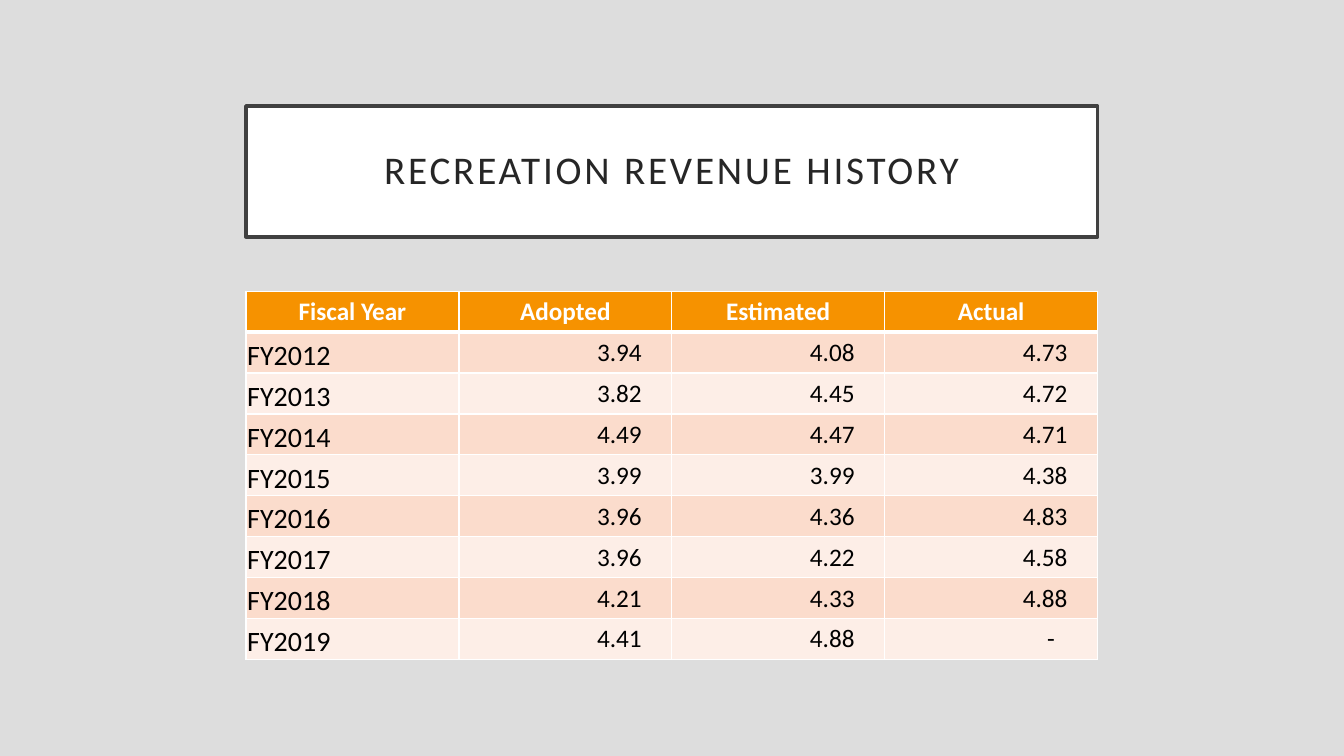
from lxml.etree import SubElement
from pptx import Presentation
from pptx.dml.color import RGBColor
from pptx.enum.shapes import MSO_SHAPE
from pptx.enum.text import MSO_ANCHOR, PP_ALIGN
from pptx.oxml.ns import qn
from pptx.util import Cm, Pt

HEAD = ["Fiscal Year", "Adopted", "Estimated", "Actual"]
ROWS = [
    ["FY2012", "3.94", "4.08", "4.73"],
    ["FY2013", "3.82", "4.45", "4.72"],
    ["FY2014", "4.49", "4.47", "4.71"],
    ["FY2015", "3.99", "3.99", "4.38"],
    ["FY2016", "3.96", "4.36", "4.83"],
    ["FY2017", "3.96", "4.22", "4.58"],
    ["FY2018", "4.21", "4.33", "4.88"],
    ["FY2019", "4.41", "4.88", "-"],
]
BANDS = ["FBDCCC", "FDEEE7"]


def paint(target, color):
    target.solid()
    target.fore_color.rgb = RGBColor.from_string(color)


def write(frame, text, size=18, color="000000", bold=False,
          align=PP_ALIGN.LEFT, lines=1.0, track=0):
    """Put one formatted run in the frame; track is letter spacing in points."""
    para = frame.paragraphs[0]
    para.alignment = align
    para.line_spacing = lines
    run = para.add_run()
    run.text = text
    font = run.font
    font.name, font.size, font.bold = "Calibri", Pt(size), bold
    paint(font.fill, color)
    if track:
        font._element.set("spc", str(track * 100))


def pad(cell, left, top, right, bottom):
    cell.margin_left, cell.margin_top = Cm(left), Cm(top)
    cell.margin_right, cell.margin_bottom = Cm(right), Cm(bottom)


def edge(cell, **widths):
    """Draw white cell borders, widths in points, keyed L, R, T, B."""
    props = cell._tc.get_or_add_tcPr()
    for side in "LRTB":
        line = SubElement(props, qn("a:ln" + side), w=str(Pt(widths.get(side, 1))))
        fill = SubElement(line, qn("a:solidFill"))
        SubElement(fill, qn("a:srgbClr"), val="FFFFFF")


def add_title(slide, left, top, width, height):
    box = slide.shapes.add_shape(MSO_SHAPE.RECTANGLE, Cm(left), Cm(top),
                                 Cm(width), Cm(height))
    box.shadow.inherit = False
    paint(box.fill, "FFFFFF")
    paint(box.line.fill, "404040")
    box.line.width = Pt(2.5)
    frame = box.text_frame
    frame.word_wrap = True
    frame.vertical_anchor = MSO_ANCHOR.MIDDLE
    pad(frame, 0.5, 0.5, 0.5, 0.5)
    write(frame, "RECREATION REVENUE HISTORY", size=28, color="262626",
          align=PP_ALIGN.CENTER, lines=0.9, track=2)


def add_head(cell, text):
    edge(cell, B=3)
    paint(cell.fill, "F69200")
    write(cell.text_frame, text, color="FFFFFF", bold=True,
          align=PP_ALIGN.CENTER)


def add_year(cell, text):
    pad(cell, 0.03, 0.03, 0.03, 0)
    cell.vertical_anchor = MSO_ANCHOR.BOTTOM
    write(cell.text_frame, text, size=20)


def add_value(cell, text):
    pad(cell, 0.03, 0.03, 1.08 if text == "-" else 0.76, 0)
    cell.vertical_anchor = MSO_ANCHOR.MIDDLE
    write(cell.text_frame, text, align=PP_ALIGN.RIGHT)


def add_history(slide, left, top, width, height):
    count = len(ROWS) + 1
    table = slide.shapes.add_table(count, len(HEAD), Cm(left), Cm(top),
                                   Cm(width), Cm(height)).table
    for col in table.columns:
        col.width = Cm(width / len(HEAD))
    for row in table.rows:
        row.height = Cm(height / count)
    for c, text in enumerate(HEAD):
        add_head(table.cell(0, c), text)
    for r, row in enumerate(ROWS):
        for c, text in enumerate(row):
            cell = table.cell(r + 1, c)
            edge(cell, T=1 if r else 3)
            paint(cell.fill, BANDS[r % 2])
            (add_value if c else add_year)(cell, text)


def main():
    deck = Presentation()
    deck.slide_width, deck.slide_height = Cm(33.87), Cm(19.05)
    slide = deck.slides.add_slide(deck.slide_layouts[6])
    paint(slide.background.fill, "DDDDDD")
    left, width = 6.2, 21.46
    add_title(slide, left, 2.67, width, 3.3)
    add_history(slide, left, 7.34, width, 9.27)
    deck.save("out.pptx")


if __name__ == "__main__":
    main()
